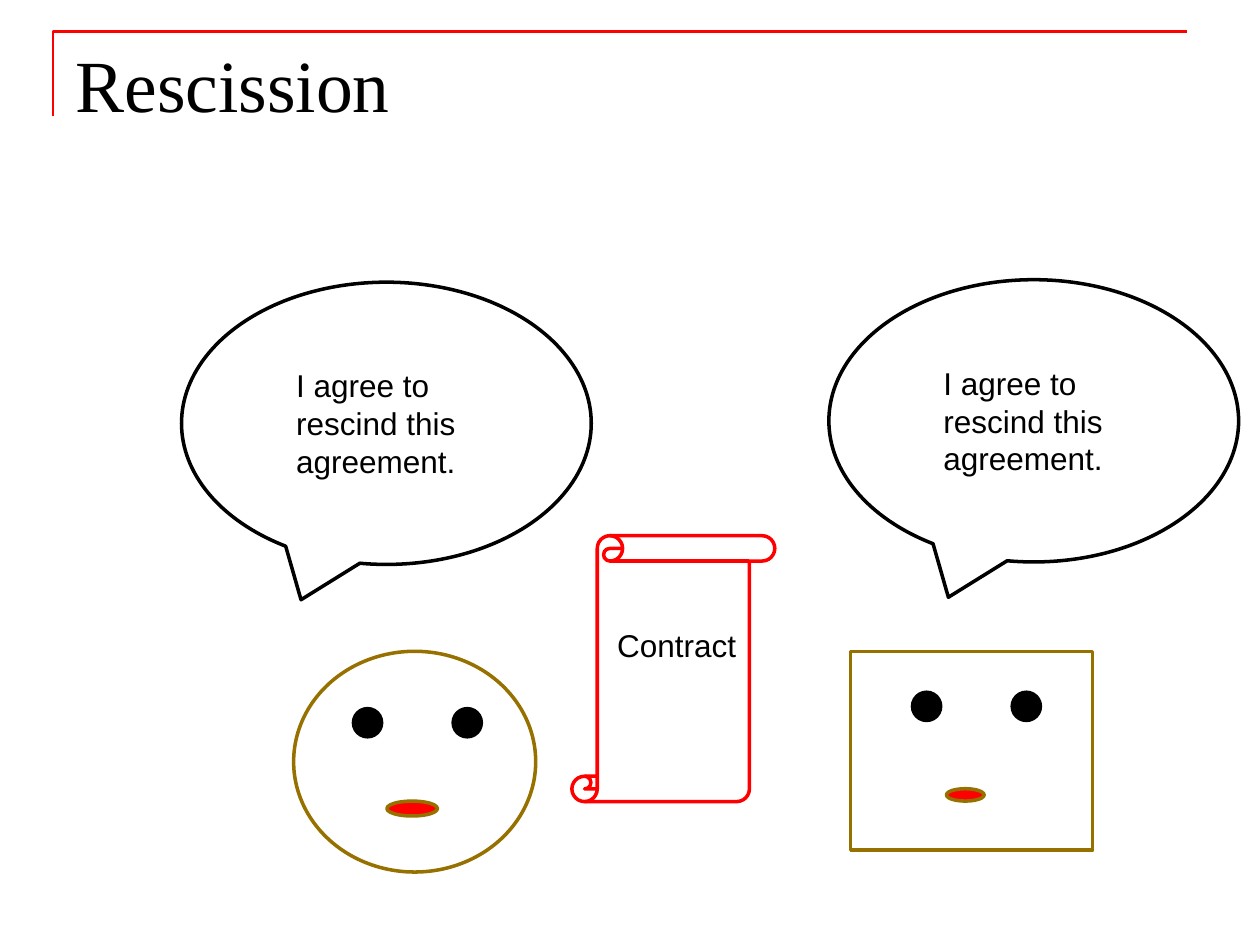
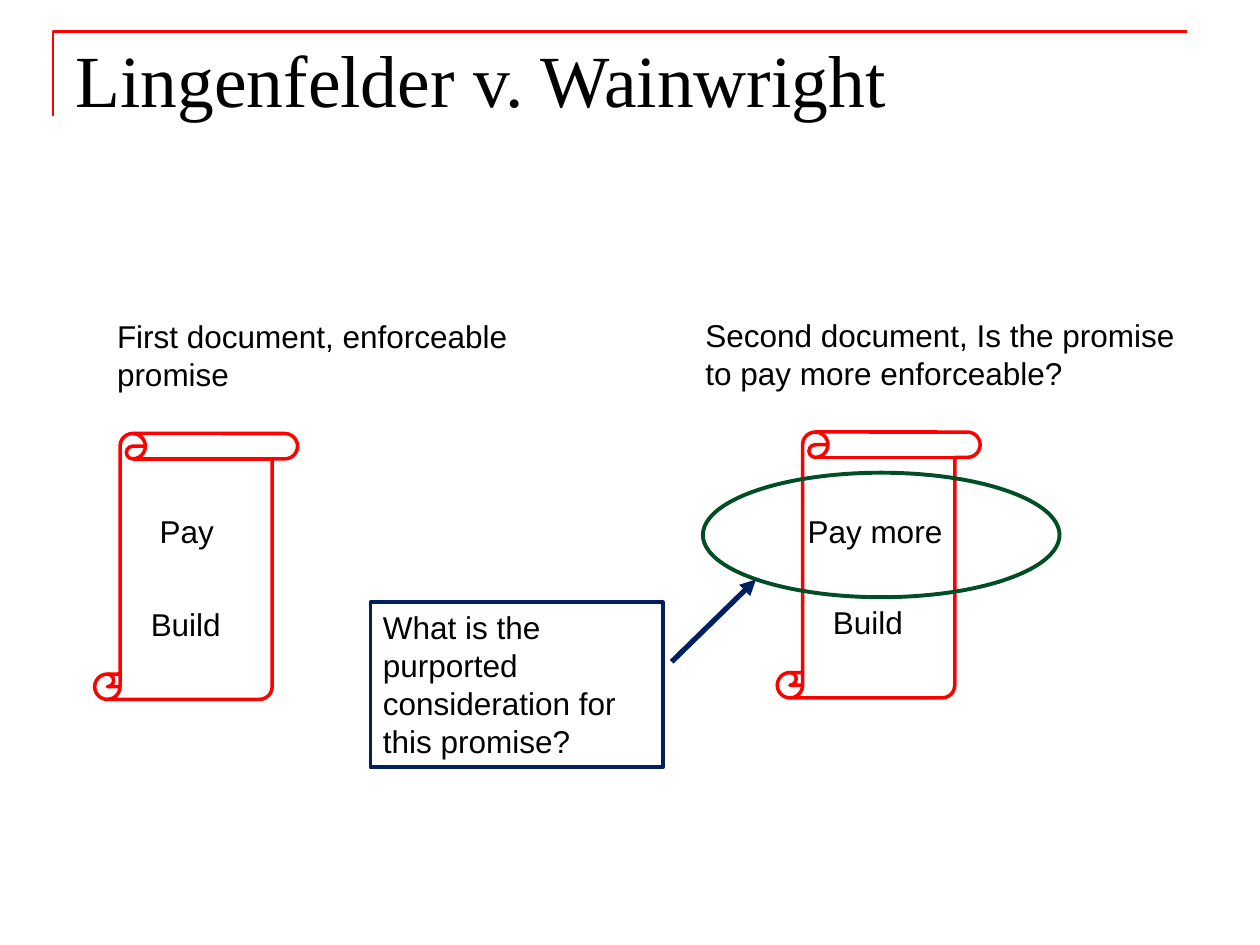
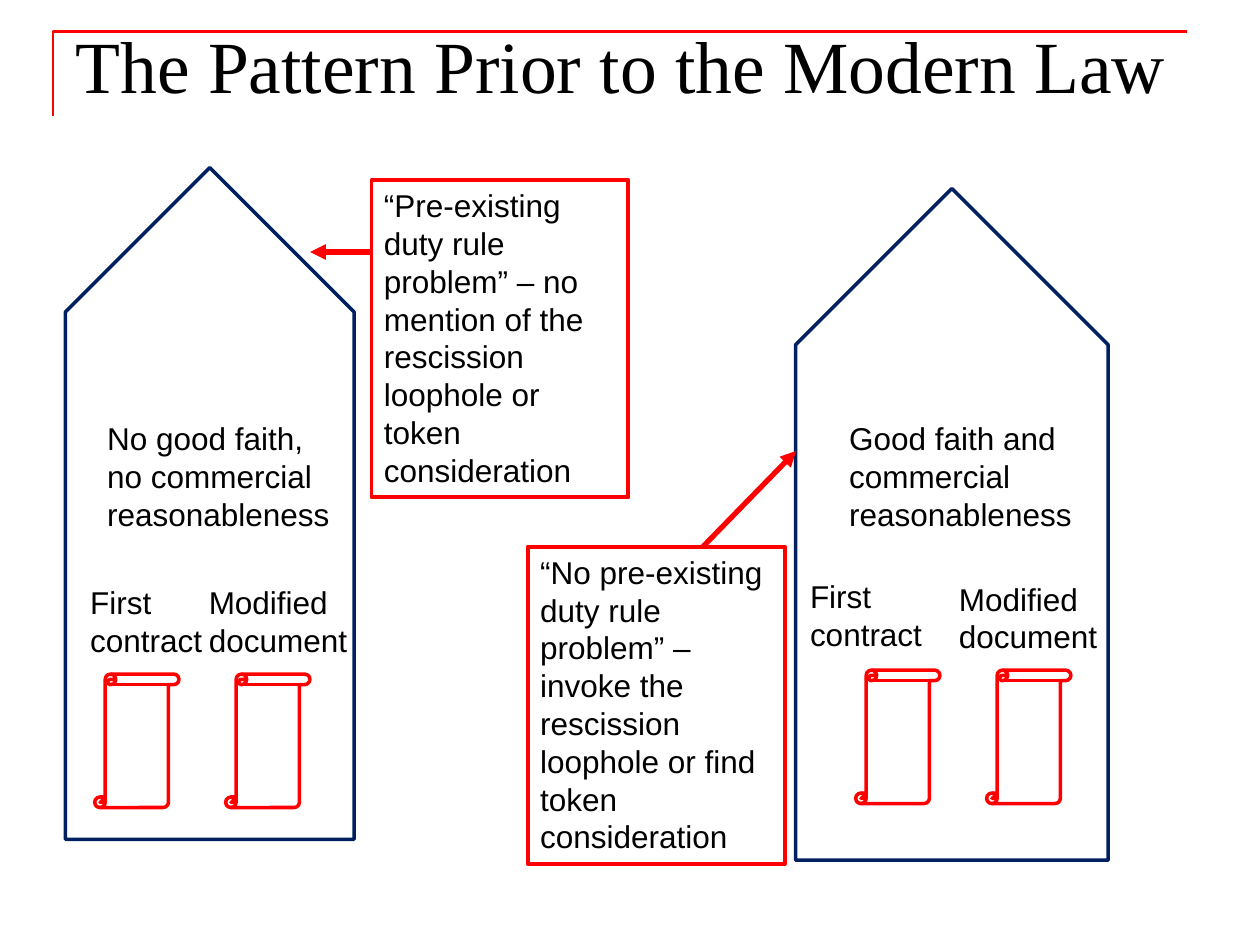
from typing import NamedTuple

from lxml import etree
from pptx import Presentation
from pptx.dml.color import RGBColor
from pptx.enum.shapes import MSO_CONNECTOR, MSO_SHAPE
from pptx.enum.text import MSO_ANCHOR, PP_ALIGN
from pptx.oxml.ns import qn
from pptx.util import Cm, Pt

# Shared style
BLACK = RGBColor(0x00, 0x00, 0x00)
RED = RGBColor(0xFF, 0x00, 0x00)
OCHRE = RGBColor(0x97, 0x71, 0x00)
GREEN = RGBColor(0x00, 0x4D, 0x26)
NAVY = RGBColor(0x00, 0x20, 0x60)

TITLE_FONT, TITLE_SIZE = "Times New Roman", 42
BODY_FONT, BODY_SIZE = "Arial", 18
TITLE_ONLY = 5

ELLIPSE = MSO_SHAPE.OVAL
RECTANGLE = MSO_SHAPE.RECTANGLE
SCROLL = MSO_SHAPE.VERTICAL_SCROLL
BUBBLE = MSO_SHAPE.OVAL_CALLOUT
PENTAGON = MSO_SHAPE.PENTAGON
STRAIGHT = MSO_CONNECTOR.STRAIGHT
LEFT = PP_ALIGN.LEFT
TOP = MSO_ANCHOR.TOP


class Frame(NamedTuple):
    """Left, top, width and height in centimetres."""
    left: float
    top: float
    width: float
    height: float

    def lengths(self) -> list:
        return [Cm(value) for value in self]


class Label(NamedTuple):
    frame: Frame
    lines: tuple
    border: RGBColor | None = None


class Face(NamedTuple):
    kind: int
    head: Frame
    eye_left: float
    eye_top: float
    mouth: Frame


class Arrow(NamedTuple):
    start: tuple
    end: tuple
    color: RGBColor


class House(NamedTuple):
    frame: Frame
    scroll_lefts: tuple
    scroll_top: float
    labels: tuple


# Drawing functions
def write_lines(text_frame, lines: tuple, font: str, size: int) -> None:
    text_frame.word_wrap = True
    text_frame.vertical_anchor = TOP
    for index, line in enumerate(lines):
        para = text_frame.paragraphs[0] if index == 0 else text_frame.add_paragraph()
        para.alignment = LEFT
        span = para.add_run()
        span.text = line
        span.font.name = font
        span.font.size = Pt(size)
        span.font.color.rgb = BLACK


def add_titled_page(deck, title: str, title_top: float):
    page = deck.slides.add_slide(deck.slide_layouts[TITLE_ONLY])
    box = page.shapes.title
    box.left, box.top, box.width, box.height = Frame(1.27, title_top, 22.86, 3.18).lengths()
    write_lines(box.text_frame, (title,), TITLE_FONT, TITLE_SIZE)
    return page


def add_corner_line(page) -> None:
    """Draw the red corner line and hand it to the layout all pages share."""
    builder = page.shapes.build_freeform(Cm(1.07), Cm(2.34))
    builder.add_line_segments([(Cm(1.07), Cm(0.64)), (Cm(23.93), Cm(0.64))], close=False)
    corner = builder.convert_to_shape()
    corner.shadow.inherit = False
    corner.fill.background()
    corner.line.color.rgb = RED
    corner.line.width = Pt(1.5)
    page.slide_layout.shapes.element.append(corner.element)


def add_figure(page, kind: int, frame: Frame, line: RGBColor | None = None,
               fill: RGBColor | None = None, width: float = 2):
    figure = page.shapes.add_shape(kind, *frame.lengths())
    figure.shadow.inherit = False
    if fill is None:
        figure.fill.background()
    else:
        figure.fill.solid()
        figure.fill.fore_color.rgb = fill
    if line is None:
        figure.line.fill.background()
    else:
        figure.line.color.rgb = line
        figure.line.width = Pt(width)
    return figure


def add_label(page, label: Label) -> None:
    box = page.shapes.add_textbox(*label.frame.lengths())
    write_lines(box.text_frame, label.lines, BODY_FONT, BODY_SIZE)
    if label.border is not None:
        box.line.color.rgb = label.border
        box.line.width = Pt(2.25)


def add_scroll(page, left: float, top: float, width: float = 4.09, height: float = 5.36) -> None:
    add_figure(page, SCROLL, Frame(left, top, width, height), RED)


def add_face(page, face: Face) -> None:
    add_figure(page, face.kind, face.head, OCHRE)
    for shift in (0, 2.01):
        add_figure(page, ELLIPSE, Frame(face.eye_left + shift, face.eye_top, 0.64, 0.64), fill=BLACK)
    add_figure(page, ELLIPSE, face.mouth, OCHRE, RED)


def add_speech(page, left: float, top: float, words: str) -> None:
    add_label(page, Label(Frame(left + 2.06, top + 1.57, 4.65, 2.57), (words,)))
    add_figure(page, BUBBLE, Frame(left, top, 8.26, 5.69), BLACK)


def add_arrow(page, arrow: Arrow) -> None:
    points = [Cm(value) for value in arrow.start + arrow.end]
    connector = page.shapes.add_connector(STRAIGHT, *points)
    connector.line.color.rgb = arrow.color
    connector.line.width = Pt(3)
    etree.SubElement(connector.line._get_or_add_ln(), qn("a:tailEnd"), type="triangle")
    etree.SubElement(connector.element.spPr, qn("a:effectLst"))


def add_house(page, house: House) -> None:
    """Turn a pentagon upright inside the frame and place its contents."""
    left, top, width, height = house.frame
    shift = (height - width) / 2
    outline = add_figure(page, PENTAGON, Frame(left - shift, top + shift, height, width), NAVY)
    outline.rotation = 270
    for scroll_left in house.scroll_lefts:
        add_scroll(page, scroll_left, house.scroll_top, 1.7, 2.69)
    for label in house.labels:
        add_label(page, label)


# Pages
def build_rescission(deck) -> None:
    page = add_titled_page(deck, "Rescission", 0.66)
    add_corner_line(page)
    faces = (
        Face(ELLIPSE, Frame(5.92, 13.13, 4.88, 4.45), 7.09, 14.25, Frame(7.8, 16.15, 1.02, 0.3)),
        Face(RECTANGLE, Frame(17.15, 13.13, 4.88, 4.01), 18.36, 13.92, Frame(19.08, 15.9, 0.76, 0.25)),
    )
    for face in faces:
        add_face(page, face)
    add_scroll(page, 11.53, 10.8)
    add_label(page, Label(Frame(12.19, 12.5, 3.43, 1.02), ("Contract",)))
    for left, top in ((3.66, 5.69), (16.71, 5.64)):
        add_speech(page, left, top, "I agree to rescind this agreement.")


def build_lingenfelder(deck) -> None:
    page = add_titled_page(deck, "Lingenfelder v. Wainwright", 0.56)
    add_scroll(page, 1.91, 8.74)
    add_scroll(page, 15.67, 8.71)
    labels = (
        Label(Frame(2.11, 6.27, 8.69, 1.8), ("First document, enforceable promise",)),
        Label(Frame(2.79, 12.07, 2.34, 1.02), ("Build",)),
        Label(Frame(2.97, 10.19, 2.34, 1.02), ("Pay",)),
        Label(Frame(13.97, 6.25, 10.59, 1.8),
              ("Second document, Is the promise to pay more enforceable?",)),
        Label(Frame(16.54, 12.04, 2.34, 1.02), ("Build",)),
        Label(Frame(16.03, 10.19, 3.38, 1.02), ("Pay more",)),
        Label(Frame(7.47, 12.14, 5.89, 3.33),
              ("What is the purported consideration for this promise?",), NAVY),
    )
    for label in labels:
        add_label(page, label)
    add_figure(page, ELLIPSE, Frame(14.17, 9.53, 7.19, 2.51), GREEN, width=2.25)
    add_arrow(page, Arrow((13.54, 13.34), (15.24, 11.68), NAVY))


def build_pattern(deck) -> None:
    page = add_titled_page(deck, "The Pattern Prior to the Modern Law", 0.28)
    first, modified = ("First contract",), ("Modified", "document")
    houses = (
        House(Frame(1.32, 3.38, 5.82, 13.54), (1.91, 4.55), 13.59, (
            Label(Frame(1.57, 11.63, 2.97, 1.8), first),
            Label(Frame(3.96, 11.63, 3.94, 1.8), modified),
            Label(Frame(1.91, 8.33, 5.18, 2.57),
                  ("No good faith, no commercial reasonableness",)),
        )),
        House(Frame(16.04, 3.8, 6.3, 13.54), (17.25, 19.89), 13.51, (
            Label(Frame(16.08, 11.51, 2.97, 1.8), first),
            Label(Frame(19.08, 11.56, 3.56, 1.8), modified),
            Label(Frame(16.87, 8.33, 5.18, 2.57),
                  ("Good faith and commercial reasonableness",)),
        )),
    )
    for house in houses:
        add_house(page, house)

    # Comments on each house
    comments = (
        Label(Frame(7.49, 3.63, 5.18, 6.4),
              ("“Pre-existing duty rule problem” – no mention of the rescission "
               "loophole or token consideration",), RED),
        Label(Frame(10.64, 11.02, 5.18, 6.4),
              ("“No pre-existing duty rule problem” – invoke the rescission "
               "loophole or find token consideration",), RED),
    )
    for comment in comments:
        add_label(page, comment)
    add_arrow(page, Arrow((7.49, 5.08), (6.25, 5.08), RED))
    add_arrow(page, Arrow((14.17, 11.02), (16.05, 9.09), RED))


def main() -> None:
    deck = Presentation()
    deck.slide_width, deck.slide_height = Cm(25.4), Cm(19.05)
    build_rescission(deck)
    build_lingenfelder(deck)
    build_pattern(deck)
    deck.save("out.pptx")


if __name__ == "__main__":
    main()
